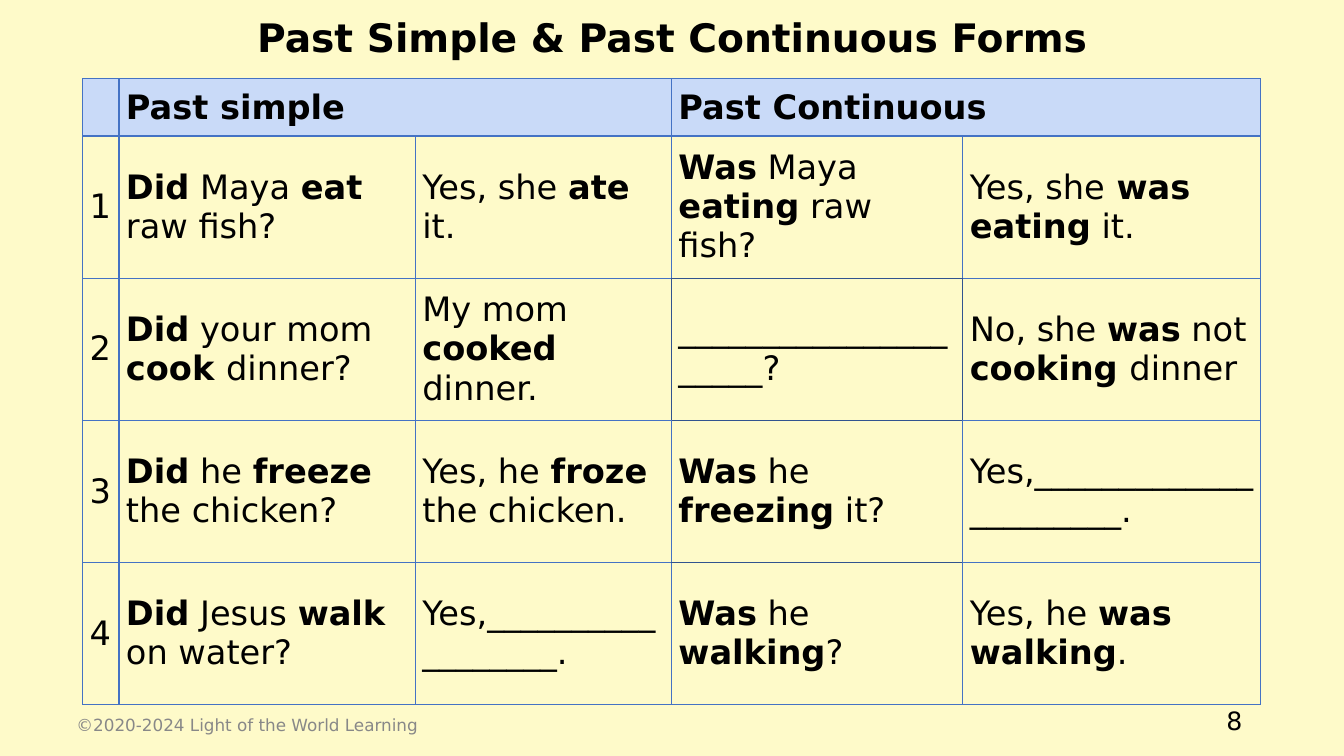
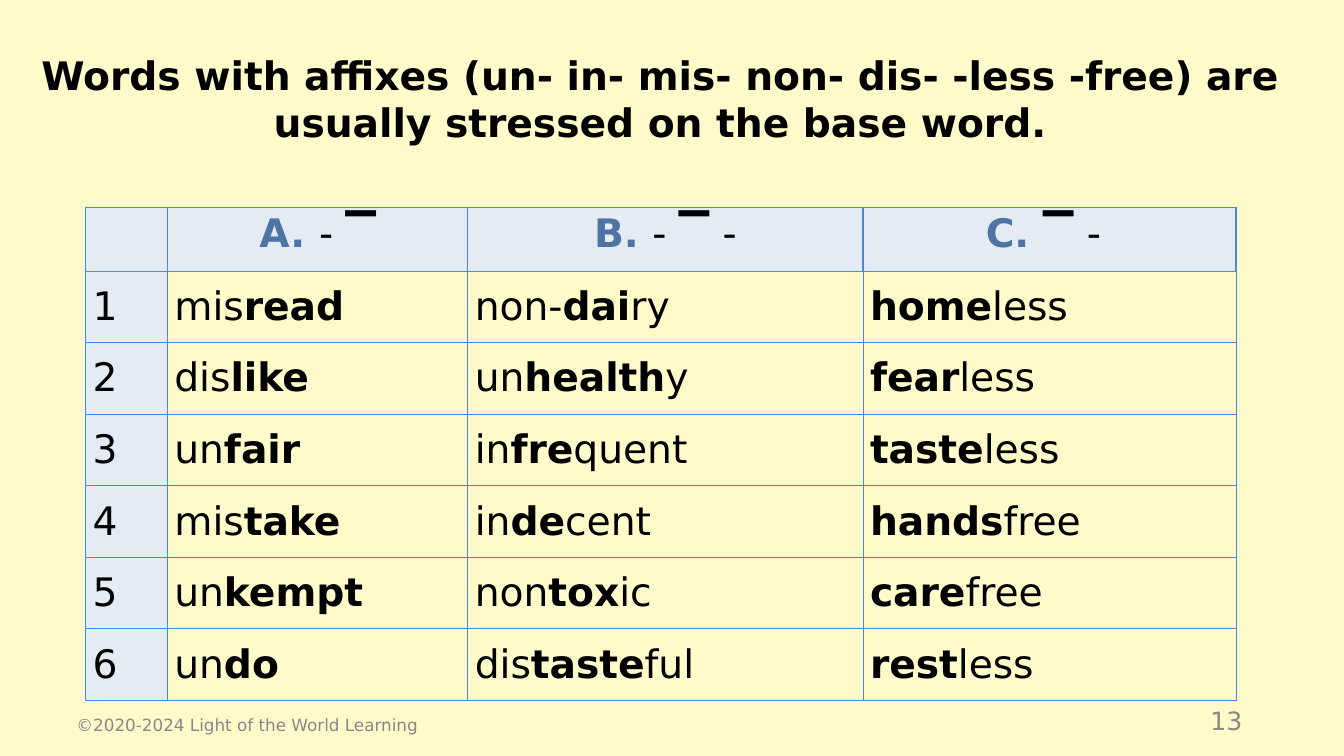
from dataclasses import dataclass

from lxml import etree
from pptx import Presentation
from pptx.dml.color import RGBColor
from pptx.enum.text import MSO_ANCHOR, PP_ALIGN
from pptx.oxml.ns import qn
from pptx.util import Inches, Pt

LEFT, MID, RIGHT = PP_ALIGN.LEFT, PP_ALIGN.CENTER, PP_ALIGN.RIGHT
TOP, CENTER = MSO_ANCHOR.TOP, MSO_ANCHOR.MIDDLE


@dataclass(frozen=True)
class Theme:
    font: str = "DejaVu Sans"
    page: str = "FEFAC9"
    ink: str = "000000"
    gray: str = "888888"
    lead: str = "4E74A3"
    title: int = 28
    number: int = 18
    note: int = 12


THEME = Theme()
WIDE, HIGH = 13.33, 7.5
NOTE = "©2020-2024 Light of the World Learning"

# In cell text, *...* is bold and the part before | is a coloured lead.
# None joins a cell to the one on its left.
FORMS = [
    ["", "*Past simple*", None, "*Past Continuous*", None],
    ["1", "*Did* Maya *eat *raw fish?", "Yes, she *ate* it.",
     "*Was* Maya *eating* raw fish?", "Yes, she* was eating* it."],
    ["2", "*Did* your mom *cook *dinner?", "My mom *cooked* dinner.",
     "_____________________?", "No, she *was* not *cooking *dinner"],
    ["3", "*Did* he *freeze *the chicken?", "Yes, he *froze *the chicken.",
     "*Was* he *freezing* it?", "Yes,______________________."],
    ["4", "*Did* Jesus *walk* on water?", "Yes,__________________.",
     "*Was* he *walking*?", "Yes, he *was walking*."],
]
WORDS = [
    ["", "A. |- *▔*", "B. |- *▔ *-", "C. |*▔ *- "],
    ["1", "mis*read*", "non-*dai*ry", "*home*less"],
    ["2", "dis*like*", "un*health*y", "*fear*less"],
    ["3", "un*fair*", "in*fre*quent", "*taste*less"],
    ["4", "mis*take*", "in*de*cent", "*hands*free"],
    ["5", "un*kempt*", "non*tox*ic", "*care*free"],
    ["6", "un*do*", "dis*taste*ful", "*rest*less"],
]
SLIDES = [
    dict(title="Past Simple & Past Continuous Forms",
         box=(0.82, 0.08, 11.69, 0.61), number="8", color=THEME.ink,
         grid=dict(rows=FORMS, at=(0.82, 0.78), cols=(0.36, 2.94, 2.54, 2.89, 2.95),
                   head=0.57, body=1.41, size=24, pad=0.07, tint="C9DAF8",
                   tab=False, line="4472C4", width=1, dark="31538F",
                   edges={(1, 3): "B", (2, 2): "R", (2, 3): "LRTB",
                          (2, 4): "L", (3, 3): "TB", (4, 3): "T"})),
    dict(title="Words with affixes (un- in- mis- non- dis- -less -free) are "
               "usually stressed on the base word.",
         box=(0, 0.46, 13.09, 0.84), number="13", color=THEME.gray,
         grid=dict(rows=WORDS, at=(0.85, 2.06), cols=(0.81, 2.98, 3.92, 3.7),
                   head=0.63, body=0.71, size=28, pad=0, tint="E4EBF2",
                   tab=True, line="4A86E8", width=0.75, dark="", edges={},
                   top=dict(align=MID, anchor=TOP, space=1.07))),
]


def write(para, text, size, color=THEME.ink, bold=False):
    """Add the marked-up text as runs."""
    lead, bar, rest = text.rpartition("|")
    parts = [(lead, True, THEME.lead)] if bar else []
    parts += [(bit, bold or i % 2 == 1, color)
              for i, bit in enumerate(rest.split("*"))]
    for bit, thick, hue in parts:
        if bit:
            run = para.add_run()
            run.text = bit
            look = dict(name=THEME.font, size=Pt(size), bold=thick)
            for key, val in look.items():
                setattr(run.font, key, val)
            run.font.color.rgb = RGBColor.from_string(hue)


def label(slide, box, text, size, color=THEME.ink, bold=False,
          align=LEFT, anchor=CENTER):
    frame = slide.shapes.add_textbox(*map(Inches, box)).text_frame
    frame.word_wrap = True
    frame.vertical_anchor = anchor
    para = frame.paragraphs[0]
    para.alignment = align
    write(para, text, size, color, bold)


def border(cell, sides):
    """Draw the (side, colour, points) lines, in the order L R T B."""
    props = cell._tc.get_or_add_tcPr()
    for i, (side, color, width) in enumerate(sides):
        line = etree.Element(qn("a:ln" + side), w=str(Pt(width)))
        fill = etree.SubElement(line, qn("a:solidFill"))
        etree.SubElement(fill, qn("a:srgbClr"), val=color)
        props.insert(i, line)


def fill_cell(cell, text, size, pad, tint, align=LEFT, anchor=CENTER, space=None):
    look = dict(margin_left=Inches(0.07), margin_right=Inches(0.07),
                margin_top=Inches(pad), margin_bottom=Inches(pad),
                vertical_anchor=anchor)
    for key, val in look.items():
        setattr(cell, key, val)
    if tint:
        cell.fill.solid()
        cell.fill.fore_color.rgb = RGBColor.from_string(tint)
    else:
        cell.fill.background()
    para = cell.text_frame.paragraphs[0]
    para.alignment = align
    if space:
        para.line_spacing = space
    write(para, text, size)


def add_grid(slide, rows, at, cols, head, body, size, pad, tint, tab,
             line, width, dark, edges, top=None):
    highs = [head] + [body] * (len(rows) - 1)
    spot = map(Inches, (*at, sum(cols), sum(highs)))
    table = slide.shapes.add_table(len(rows), len(cols), *spot).table
    table.first_row = table.horz_banding = False
    for col, wide in zip(table.columns, cols):
        col.width = Inches(wide)
    for r, texts in enumerate(rows):
        table.rows[r].height = Inches(highs[r])
        for c, text in enumerate(texts):
            cell = table.cell(r, c)
            shade = tint if r == 0 or (tab and c == 0) else None
            more = top if top and r == 0 else {}
            fill_cell(cell, text or "", size, pad, shade, **more)
            marks = edges.get((r, c), "")
            border(cell, [(side, dark if side in marks else line,
                           1 if r == 0 and side != "B" else width)
                          for side in "LRTB"])
            if text is None:
                table.cell(r, c - 1).merge(cell)


def main():
    deck = Presentation()
    deck.slide_width, deck.slide_height = Inches(WIDE), Inches(HIGH)
    back = deck.slide_master.background.fill
    back.solid()
    back.fore_color.rgb = RGBColor.from_string(THEME.page)
    for page in SLIDES:
        slide = deck.slides.add_slide(deck.slide_layouts[6])
        add_grid(slide, **page["grid"])
        label(slide, page["box"], page["title"], THEME.title,
              bold=True, align=MID, anchor=TOP)
        label(slide, (9.42, 6.95, 3, 0.4), page["number"], THEME.number,
              page["color"], align=RIGHT)
        label(slide, (0.66, 6.99, 4.5, 0.4), NOTE, THEME.note, THEME.gray)
    deck.save("out.pptx")


if __name__ == "__main__":
    main()
